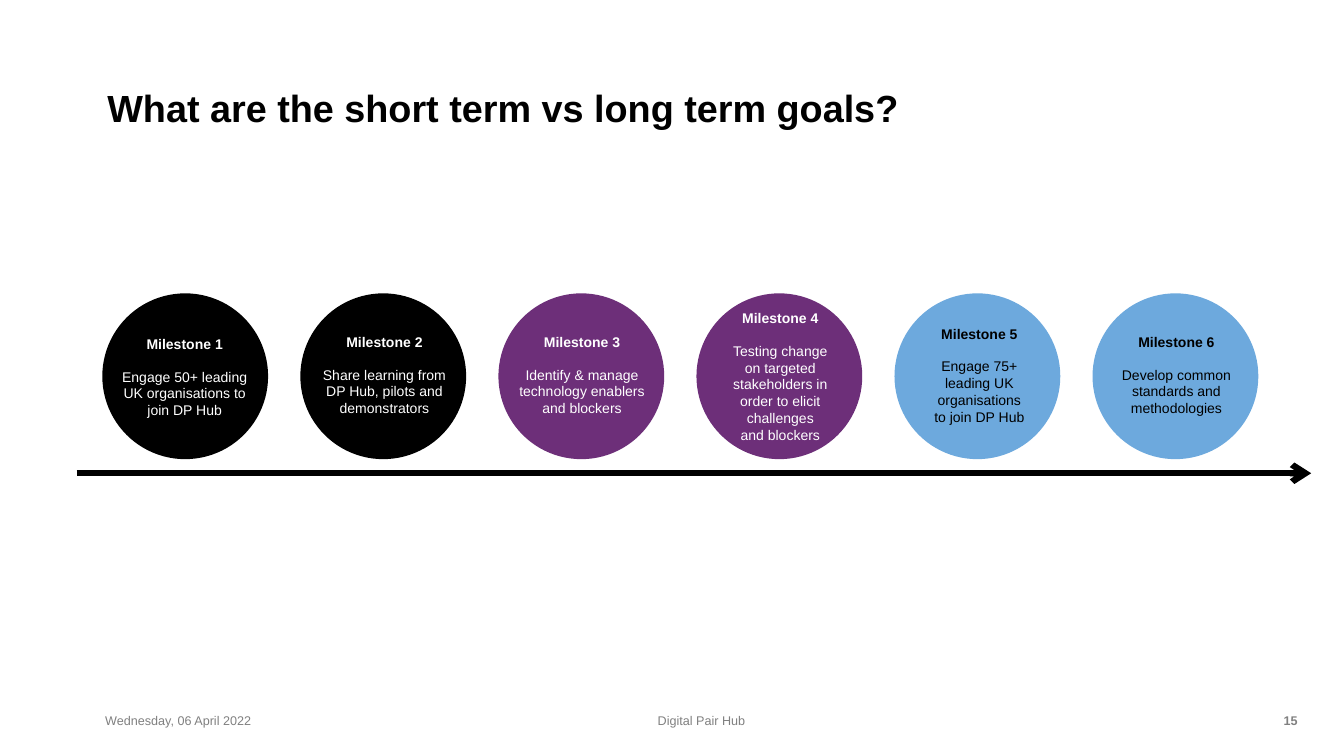
from lxml.etree import SubElement
from pptx import Presentation
from pptx.dml.color import RGBColor
from pptx.enum.shapes import MSO_CONNECTOR, MSO_SHAPE
from pptx.enum.text import MSO_ANCHOR, MSO_AUTO_SIZE, PP_ALIGN
from pptx.oxml.ns import qn
from pptx.util import Inches, Pt

BLACK, WHITE, GREY = "000000", "FFFFFF", "808080"
PURPLE, BLUE = "6D2F79", "6DA9DD"

STEPS = [
    (["Engage 50+ leading UK organisations to join DP Hub"],
     BLACK, WHITE, (0.29, 0.78, 2.69, 1.78)),
    (["Share learning from DP Hub, pilots and demonstrators"],
     BLACK, WHITE, (0.17, 0.74, 3, 1.78)),
    (["Identify & manage technology enablers and blockers"],
     PURPLE, WHITE, (0.28, 0.74, 2.76, 1.78)),
    (["Testing change\non targeted stakeholders in order to elicit challenges",
      "and blockers"],
     PURPLE, WHITE, (0.33, 0.27, 2.67, 2.79)),
    (["Engage 75+ leading UK organisations to join DP Hub"],
     BLUE, BLACK, (0.65, 0.58, 2.07, 2.12)),
    (["Develop common standards and methodologies"],
     BLUE, BLACK, (0.47, 0.74, 2.39, 1.78)),
]


def paint(color):
    return RGBColor.from_string(color)


def write(para, text, size=20, color=BLACK, bold=False,
          align=PP_ALIGN.LEFT, before=0, spacing=1.0):
    para.text = text
    para.alignment = align
    para.space_before = Pt(before)
    para.line_spacing = spacing
    for run in para.runs:
        run.font.name = "Arial"
        run.font.size = Pt(size)
        run.font.bold = bold
        run.font.color.rgb = paint(color)


def add_box(slide, left, top, width, height, anchor=MSO_ANCHOR.TOP):
    box = slide.shapes.add_textbox(*map(Inches, (left, top, width, height)))
    frame = box.text_frame
    frame.word_wrap = True
    frame.vertical_anchor = anchor
    return frame


def add_title(slide, left, top, width, height):
    title = slide.shapes.title
    title.left, title.top = Inches(left), Inches(top)
    title.width, title.height = Inches(width), Inches(height)
    frame = title.text_frame
    frame.vertical_anchor = MSO_ANCHOR.TOP
    frame.auto_size = MSO_AUTO_SIZE.NONE
    write(frame.paragraphs[0], "What are the short term vs long term goals?",
          size=54, bold=True, spacing=0.9)


def add_arrow(slide, left, right, top):
    arrow = slide.shapes.add_connector(
        MSO_CONNECTOR.STRAIGHT, *map(Inches, (left, top, right, top)))
    arrow.line.color.rgb = paint(BLACK)
    arrow.line.width = Pt(8.75)
    SubElement(arrow.line._get_or_add_ln(), qn("a:tailEnd"), type="arrow")
    SubElement(arrow._element.spPr, qn("a:effectLst"))


def add_step(slide, left, top, size, name, lines, fill, color, inner):
    disc = slide.shapes.add_shape(
        MSO_SHAPE.OVAL, *map(Inches, (left, top, size, size)))
    disc.shadow.inherit = False
    disc.fill.solid()
    disc.fill.fore_color.rgb = paint(fill)
    disc.line.fill.background()

    x, y, width, height = inner
    frame = add_box(slide, left + x, top + y, width, height)
    frame.auto_size = MSO_AUTO_SIZE.SHAPE_TO_FIT_TEXT
    write(frame.paragraphs[0], name, color=color, bold=True,
          align=PP_ALIGN.CENTER)
    for index, line in enumerate(lines):
        write(frame.add_paragraph(), line, color=color,
              align=PP_ALIGN.CENTER, before=0 if index else 23)


def add_steps(slide, left, top, size=3.29, pitch=3.93):
    for index, (lines, fill, color, inner) in enumerate(STEPS):
        add_step(slide, left + index * pitch, top, size,
                 f"Milestone {index + 1}", lines, fill, color, inner)


def add_footer(slide, left, top, width, height):
    parts = [
        ("Wednesday, 06 April 2022", 0, 6, PP_ALIGN.LEFT, False),
        ("Digital Pair Hub", 7.43, 9, PP_ALIGN.CENTER, False),
        ("15", width - 6, 6, PP_ALIGN.RIGHT, True),
    ]
    for text, x, span, align, bold in parts:
        frame = add_box(slide, left + x, top, span, height, MSO_ANCHOR.MIDDLE)
        write(frame.paragraphs[0], text, size=18, color=GREY,
              bold=bold, align=align)


def main():
    deck = Presentation()
    deck.slide_width, deck.slide_height = Inches(26.67), Inches(15)
    slide = deck.slides.add_slide(deck.slide_layouts[5])
    add_title(slide, 2.03, 1.73, 23, 2.9)
    add_arrow(slide, 1.52, 26.02, 9.39)
    add_steps(slide, 2.03, 5.82)
    add_footer(slide, 1.99, 13.9, 23.86, 0.8)
    deck.save("out.pptx")


if __name__ == "__main__":
    main()
